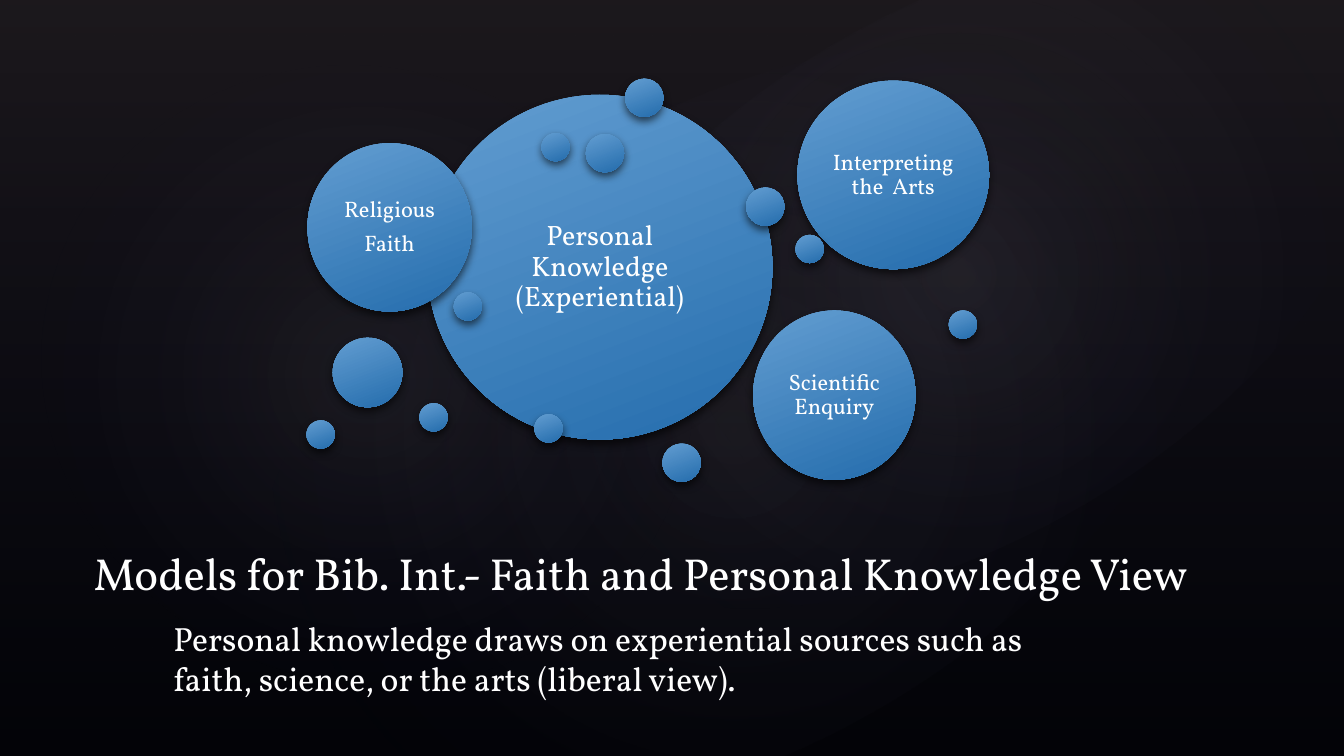
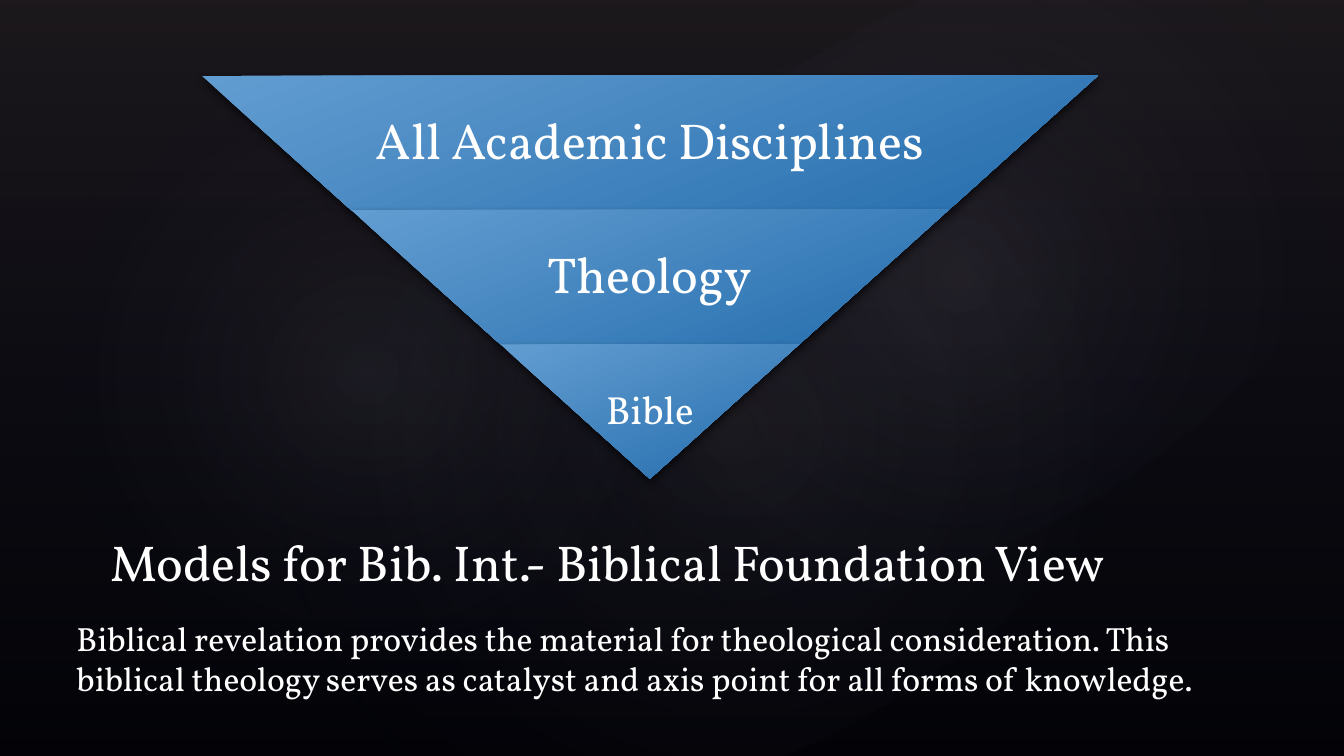
from lxml import etree
from pptx import Presentation
from pptx.dml.color import RGBColor
from pptx.enum.shapes import MSO_SHAPE
from pptx.enum.text import MSO_ANCHOR, PP_ALIGN
from pptx.oxml.ns import qn
from pptx.util import Inches, Pt

OVAL, RECTANGLE, TRAPEZOID = MSO_SHAPE.OVAL, MSO_SHAPE.RECTANGLE, MSO_SHAPE.TRAPEZOID
TOP, MIDDLE, BOTTOM = MSO_ANCHOR.TOP, MSO_ANCHOR.MIDDLE, MSO_ANCHOR.BOTTOM
LEFT, CENTER = PP_ALIGN.LEFT, PP_ALIGN.CENTER

FONT = "Vollkorn"
COLORS = {
    "background": "000000",
    "text": "FFFFFF",
    "light_blue": "629DD1",
    "deep_blue": "256DAD",
    "plum": "504652",
    "navy": "242852",
    "mist": "C4BCC6",
    "shadow": "000000",
}
SLIDE_W, SLIDE_H = 13.33, 7.5

# Soft glows behind every slide: box, rotation, centre opacity in percent
GLOWS = [
    ((2, 1.14, 10.56, 6.24), 328.7, 7),
    ((0.61, 0.46, 6.06, 6.53), 294.3, 8),
    ((4.78, 0.13, 9.45, 5.2), 328.7, 8),
]

# Bubbles, placed from the corner of the diagram: box, text size, paragraphs
TOPICS = [
    ((1.24, 0.19, 3.42, 3.42), 20, ["Personal Knowledge\v(Experiential)"]),
    ((0.05, 0.67, 1.63, 1.67), 16, ["Religious", "Faith"]),
    ((4.91, 0.05, 1.9, 1.87), 16, ["Interpreting the  Arts"]),
    ((4.47, 2.33, 1.61, 1.68), 16, ["Scientific Enquiry"]),
]
# Diameter of the small bubbles and their corners
DOTS = {
    0.28: [(2.3, 3.36), (4.89, 1.58), (2.37, 0.57), (1.5, 2.15),
           (0.04, 3.42), (1.16, 3.25), (6.41, 2.33)],
    0.38: [(3.2, 0.03), (3.57, 3.65), (2.81, 0.58), (4.4, 1.11)],
    0.69: [(0.3, 2.6)],
}

# Layers of the inverted pyramid, from the top: text and size
LAYERS = [("All Academic Disciplines", 36), ("Theology", 36), ("Bible", 28)]


def set_gradient(shape, stops, angle=None):
    """Stops are (position, colour, opacity); without an angle it is radial."""
    shape.fill.background()
    gradient = etree.Element(qn("a:gradFill"), rotWithShape="0")
    stop_list = etree.SubElement(gradient, qn("a:gsLst"))
    for position, color, opacity in stops:
        stop = etree.SubElement(stop_list, qn("a:gs"), pos=str(position * 1000))
        rgb = etree.SubElement(stop, qn("a:srgbClr"), val=COLORS[color])
        if opacity < 100:
            etree.SubElement(rgb, qn("a:alpha"), val=str(opacity * 1000))
    if angle is None:
        radial = etree.SubElement(gradient, qn("a:path"), path="circle")
        etree.SubElement(radial, qn("a:fillToRect"),
                         l="50000", t="50000", r="50000", b="50000")
    else:
        etree.SubElement(gradient, qn("a:lin"), ang=str(angle * 60000), scaled="0")
    properties = shape.element.spPr
    properties.replace(properties.find(qn("a:noFill")), gradient)


def add_plain_shape(slide, kind, box, rotation=0):
    shape = slide.shapes.add_shape(kind, *map(Inches, box))
    shape.rotation = rotation
    shape.line.fill.background()
    shape.shadow.inherit = False
    return shape


def add_blue_shape(slide, kind, box, rotation=0):
    shape = add_plain_shape(slide, kind, box, rotation)
    set_gradient(shape, [(0, "light_blue", 100), (100, "deep_blue", 100)], 69)
    effects = shape.element.spPr.find(qn("a:effectLst"))
    shadow = etree.SubElement(effects, qn("a:outerShdw"), blurRad=str(Pt(6)),
                              dist=str(Pt(3)), dir="5400000", rotWithShape="0")
    rgb = etree.SubElement(shadow, qn("a:srgbClr"), val=COLORS["shadow"])
    etree.SubElement(rgb, qn("a:alpha"), val="60000")
    return shape


def write(shape, paragraphs, size, align=LEFT, anchor=TOP, inset=None):
    frame = shape.text_frame
    frame.word_wrap = True
    frame.vertical_anchor = anchor
    if inset is not None:
        frame.margin_left = frame.margin_right = Inches(inset)
        frame.margin_top = frame.margin_bottom = Inches(inset)
    for index, text in enumerate(paragraphs):
        paragraph = frame.add_paragraph() if index else frame.paragraphs[0]
        paragraph.text = text
        paragraph.alignment = align
        paragraph.font.name = FONT
        paragraph.font.size = Pt(size)
        paragraph.font.color.rgb = RGBColor.from_string(COLORS["text"])
        if align == CENTER:
            paragraph.line_spacing = 0.9
            paragraph.space_after = Pt(0.4 * size)


def add_label(slide, box, text, size, **style):
    write(slide.shapes.add_textbox(*map(Inches, box)), [text], size, **style)


def add_backdrop(slide):
    background = slide.background.fill
    background.solid()
    background.fore_color.rgb = RGBColor.from_string(COLORS["background"])
    wash = add_plain_shape(slide, RECTANGLE, (0, 0, SLIDE_W, SLIDE_H))
    set_gradient(wash, [(0, "plum", 36), (100, "navy", 10)], 90)
    for box, rotation, opacity in GLOWS:
        glow = add_plain_shape(slide, OVAL, box, rotation)
        set_gradient(glow, [(0, "mist", opacity), (58, "navy", 0)])


def add_bubbles(slide, left, top):
    for (x, y, width, height), size, paragraphs in TOPICS:
        bubble = add_blue_shape(slide, OVAL, (left + x, top + y, width, height))
        write(bubble, paragraphs, size, CENTER, MIDDLE, 0.07)
    for diameter, corners in DOTS.items():
        for x, y in corners:
            add_blue_shape(slide, OVAL, (left + x, top + y, diameter, diameter))


def add_inverted_pyramid(slide, left, top, width, height):
    layer_height = height / len(LAYERS)
    step = width / len(LAYERS) / 2
    for index, (text, size) in enumerate(LAYERS):
        box = (left + index * step, top + index * layer_height,
               width - 2 * index * step, layer_height)
        layer = add_blue_shape(slide, TRAPEZOID, box, 180)
        layer.adjustments[0] = step / layer_height
        # The layer is upside down, so its text stands in a box of its own
        add_label(slide, box, text, size, align=CENTER, anchor=MIDDLE, inset=0.05)


def add_model_slide(deck, title, title_box, title_size, caption, caption_box):
    slide = deck.slides.add_slide(deck.slide_layouts[6])
    add_backdrop(slide)
    add_label(slide, title_box, title, title_size, anchor=BOTTOM)
    add_label(slide, caption_box, caption, 24)
    return slide


def main():
    deck = Presentation()
    deck.slide_width, deck.slide_height = Inches(SLIDE_W), Inches(SLIDE_H)

    # Faith and personal knowledge
    knowledge = add_model_slide(
        deck,
        "Models for Bib. Int.- Faith and Personal Knowledge View",
        (0.83, 5, 11.92, 1), 32,
        "Personal knowledge draws on experiential sources such as faith, "
        "science, or the arts (liberal view).",
        (1.62, 6.08, 9.25, 0.91))
    add_bubbles(knowledge, 3, 0.75)

    # Biblical foundation
    foundation = add_model_slide(
        deck,
        "Models for Bib. Int.- Biblical Foundation View",
        (1, 4.92, 11, 1), 36,
        "Biblical revelation provides the material for theological "
        "consideration. This biblical theology serves as catalyst and axis "
        "point for all forms of knowledge.",
        (0.66, 6.08, 11.92, 0.91))
    add_inverted_pyramid(foundation, 2, 0.75, 8.89, 4)

    deck.save("out.pptx")


if __name__ == "__main__":
    main()
